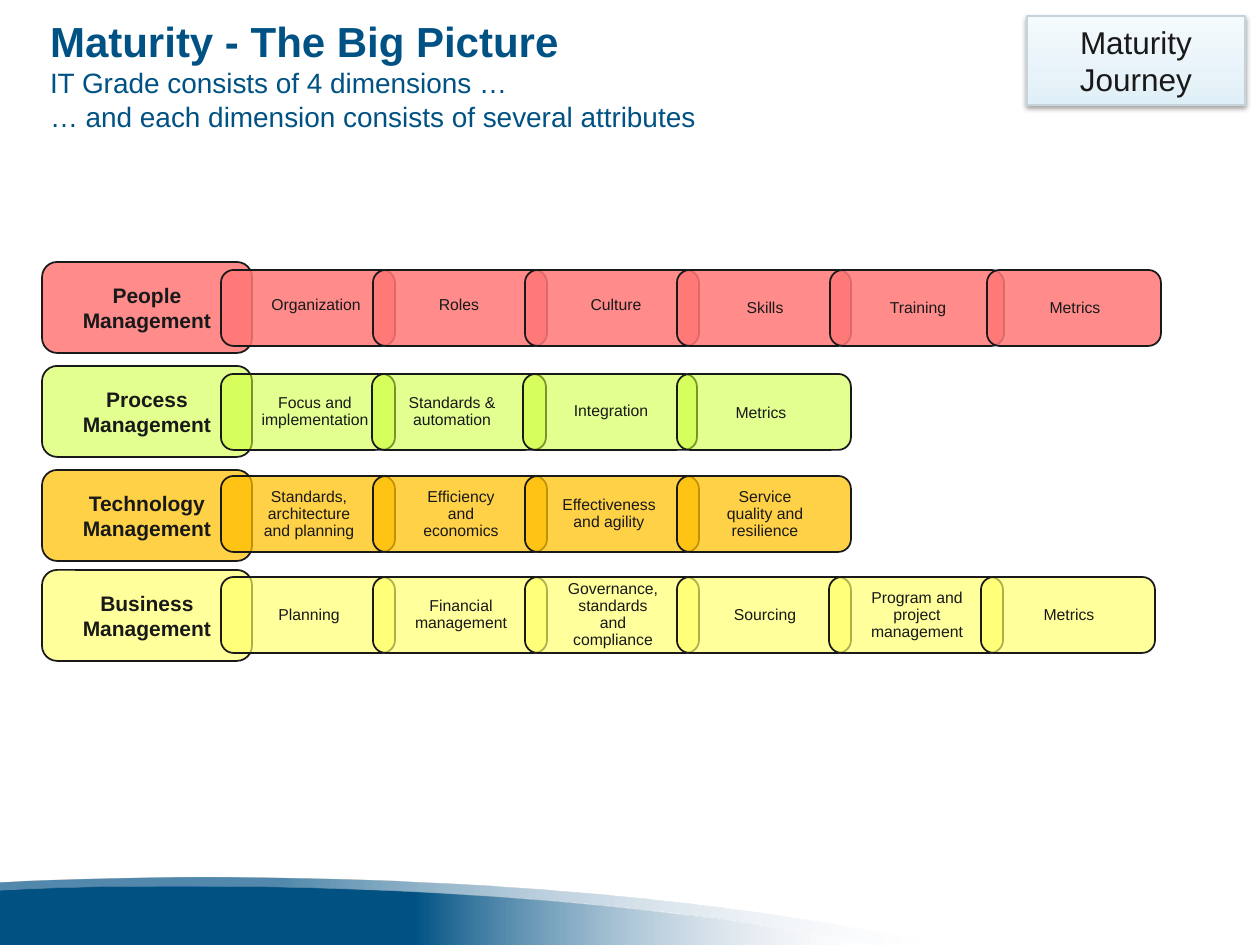
from dataclasses import dataclass

from lxml import etree
from pptx import Presentation
from pptx.dml.color import RGBColor
from pptx.enum.shapes import MSO_SHAPE
from pptx.enum.text import MSO_ANCHOR, PP_ALIGN
from pptx.oxml.ns import qn
from pptx.util import Pt

ROUNDED, RECT = MSO_SHAPE.ROUNDED_RECTANGLE, MSO_SHAPE.RECTANGLE
MIDDLE, BOTTOM = MSO_ANCHOR.MIDDLE, MSO_ANCHOR.BOTTOM
LEFT, CENTER = PP_ALIGN.LEFT, PP_ALIGN.CENTER

EMU_PER_PX = 914400 / 126
BLUE = RGBColor(0x00, 0x52, 0x84)
INK = RGBColor(0x19, 0x19, 0x19)
BLACK = RGBColor(0x00, 0x00, 0x00)
MIST = RGBColor(0xE0, 0xE5, 0xF0)
BADGE_LINE = RGBColor(0xC7, 0xD3, 0xDA)
BADGE_LOW = RGBColor(0xDF, 0xEF, 0xF7)
BADGE_MID = RGBColor(0xE8, 0xF3, 0xF9)
BADGE_HIGH = RGBColor(0xF5, 0xFB, 0xFD)
RED = RGBColor(0xFF, 0x77, 0x77)
GREEN = RGBColor(0xCC, 0xFF, 0x33)
ORANGE = RGBColor(0xFF, 0xC0, 0x00)
YELLOW = RGBColor(0xFF, 0xFF, 0x66)

HEAD_LEFT, HEAD_WIDTH, HEAD_HEIGHT = 42, 210, 91
TILE_LEFT, TILE_PITCH, TILE_WIDTH, TILE_HEIGHT = 221, 152, 174, 76

TITLE_FORMAT = {"name": "Arial", "size": Pt(24), "bold": True}
SUBTITLE_FORMAT = {"name": "Arial", "size": Pt(16), "bold": False}
HEAD_FORMAT = {"name": "Arial", "size": Pt(12), "bold": True}
LABEL_FORMAT = {"name": "Arial", "size": Pt(9)}
BADGE_FORMAT = {"name": "Arial", "size": Pt(18)}


@dataclass
class Attribute:
    label: str
    label_dx: int = 35
    label_dy: int = 0
    label_width: int = 105
    tile_dx: int = 0


# Name, colour, opacity in percent, top of head, top of tiles, attributes
DIMENSIONS = [
    ("People Management", RED, 85, 262, 270, [
        Attribute("Organization", 42, -3), Attribute("Roles", 33, -3),
        Attribute("Culture", 38, -3), Attribute("Skills"),
        Attribute("Training", tile_dx=1), Attribute("Metrics", tile_dx=6)]),
    ("Process Management", GREEN, 54, 366, 374, [
        Attribute("Focus and implementation", label_width=117),
        Attribute("Standards & automation", 21, label_width=117, tile_dx=-1),
        Attribute("Integration", label_dy=-1, tile_dx=-2),
        Attribute("Metrics", 31, 1)]),
    ("Technology Management", ORANGE, 72, 470, 476, [
        Attribute("Standards, architecture and planning"),
        Attribute("Efficiency and economics"),
        Attribute("Effectiveness and agility", 28, label_width=111),
        Attribute("Service quality and resilience")]),
    ("Business Management", YELLOW, 65, 570, 577, [
        Attribute("Planning"), Attribute("Financial management"),
        Attribute("Governance, standards and compliance"),
        Attribute("Sourcing"), Attribute("Program and project management"),
        Attribute("Metrics")]),
]

# Wave outlines: a two-number step is a line, a six-number step a curve
WAVE_BODY = [(180, 887), (450, 887, 694, 908, 876, 945), (0, 945), (0, 891),
             (58, 888, 118, 887, 180, 887)]
WAVE_CREST = [(202, 878), (491, 878, 752, 903, 937, 945), (876, 945),
              (694, 908, 450, 887, 180, 887), (118, 887, 58, 888, 0, 891),
              (0, 883), (66, 880, 132, 878, 202, 878)]


def px(length):
    return round(length * EMU_PER_PX)


def add_color(parent, color, opacity):
    node = etree.SubElement(parent, qn("a:srgbClr"), val=str(color))
    etree.SubElement(node, qn("a:alpha"), val=str(opacity * 1000))


def fill_gradient(shape, stops, angle):
    shape.fill.gradient()
    gradient = shape._element.spPr.find(qn("a:gradFill"))
    for child in list(gradient):
        gradient.remove(child)
    stop_list = etree.SubElement(gradient, qn("a:gsLst"))
    for position, color, opacity in stops:
        stop = etree.SubElement(stop_list, qn("a:gs"), pos=str(position * 1000))
        add_color(stop, color, opacity)
    etree.SubElement(gradient, qn("a:lin"), ang=str(angle * 60000), scaled="0")


def fill_solid(shape, color, opacity):
    shape.fill.solid()
    shape.fill.fore_color.rgb = color
    node = shape._element.spPr.find(qn("a:solidFill")).find(qn("a:srgbClr"))
    etree.SubElement(node, qn("a:alpha"), val=str(opacity * 1000))


def add_box(slide, kind, left, top, width, height):
    box = slide.shapes.add_shape(kind, px(left), px(top), px(width), px(height))
    box.shadow.inherit = False
    return box


def outline(shape, color, points):
    shape.line.color.rgb = color
    shape.line.width = Pt(points)


def write(shape, lines, color, align=CENTER, anchor=MIDDLE, insets=None, spacing=None):
    """Write (text, format) lines as one paragraph with line breaks."""
    frame = shape.text_frame
    frame.word_wrap = True
    frame.vertical_anchor = anchor
    if insets:
        (frame.margin_left, frame.margin_top,
         frame.margin_right, frame.margin_bottom) = map(px, insets)
    paragraph = frame.paragraphs[0]
    paragraph.alignment = align
    paragraph.line_spacing = spacing
    for index, (text, text_format) in enumerate(lines):
        if index:
            paragraph.add_line_break()
        run = paragraph.add_run()
        run.text = text
        run.font.color.rgb = color
        for key, value in text_format.items():
            setattr(run.font, key, value)


def bend(wave, steps):
    """Join the three lines of each curve step into one Bezier segment."""
    lines = list(wave._element.iter(qn("a:lnTo")))
    for step in steps:
        segment = [lines.pop(0) for _ in range(len(step) // 2)]
        if len(segment) == 3:
            curve = etree.Element(qn("a:cubicBezTo"))
            segment[0].addprevious(curve)
            for line in segment:
                curve.append(line[0])
                line.getparent().remove(line)


def add_wave(slide, outline_steps, stops):
    start, *steps = outline_steps
    points = [(px(step[i]), px(step[i + 1]))
              for step in steps for i in range(0, len(step), 2)]
    builder = slide.shapes.build_freeform(px(start[0]), px(start[1]), scale=1.0)
    builder.add_line_segments(points, close=True)
    wave = builder.convert_to_shape()
    bend(wave, steps)
    wave.shadow.inherit = False
    wave.line.fill.background()
    fill_gradient(wave, stops, 0)


def add_title(slide):
    title = slide.shapes.add_textbox(px(50), px(53), px(1165), px(80))
    write(title, [("Maturity - The Big Picture", TITLE_FORMAT),
                  ("IT Grade consists of 4 dimensions …", SUBTITLE_FORMAT),
                  ("… and each dimension consists of several attributes", SUBTITLE_FORMAT)],
          BLUE, LEFT, BOTTOM, (0, 0, 0, 0))


def add_attribute(slide, attribute, left, top, color, opacity):
    left += attribute.tile_dx
    tile = add_box(slide, ROUNDED, left, top, TILE_WIDTH, TILE_HEIGHT)
    fill_solid(tile, color, opacity)
    outline(tile, INK, 1)
    label = add_box(slide, ROUNDED, left + attribute.label_dx, top + attribute.label_dy,
                    attribute.label_width, TILE_HEIGHT)
    label.fill.background()
    label.line.fill.background()
    write(label, [(attribute.label, LABEL_FORMAT)], INK, insets=(1, 0, 0, 0), spacing=0.9)


def add_dimension(slide, name, color, opacity, head_top, tile_top, attributes):
    head = add_box(slide, ROUNDED, HEAD_LEFT, head_top, HEAD_WIDTH, HEAD_HEIGHT)
    fill_solid(head, color, opacity)
    outline(head, INK, 1)
    write(head, [(name, HEAD_FORMAT)], INK)
    for column, attribute in enumerate(attributes):
        add_attribute(slide, attribute, TILE_LEFT + column * TILE_PITCH, tile_top,
                      color, opacity)


def add_badge(slide):
    badge = add_box(slide, RECT, 1027, 16, 218, 89)
    fill_gradient(badge, [(0, BADGE_LOW, 100), (35, BADGE_MID, 100),
                          (100, BADGE_HIGH, 100)], 270)
    outline(badge, BADGE_LINE, 0.75)
    effects = badge._element.spPr.find(qn("a:effectLst"))
    shadow = etree.SubElement(effects, qn("a:outerShdw"), blurRad=str(Pt(3.1)),
                              dist=str(Pt(1.6)), dir="5400000", rotWithShape="0")
    add_color(shadow, BLACK, 37)
    write(badge, [("Maturity Journey", BADGE_FORMAT)], INK)


def main():
    deck = Presentation()
    deck.slide_width, deck.slide_height = px(1260), px(945)
    slide = deck.slides.add_slide(deck.slide_layouts[6])
    # Footer wave
    add_wave(slide, WAVE_BODY, [(47, BLUE, 100), (100, MIST, 0)])
    add_wave(slide, WAVE_CREST, [(30, BLUE, 68), (100, MIST, 0)])
    # Heading, dimension rows and section badge
    add_title(slide)
    for dimension in DIMENSIONS:
        add_dimension(slide, *dimension)
    add_badge(slide)
    deck.save("out.pptx")


if __name__ == "__main__":
    main()
